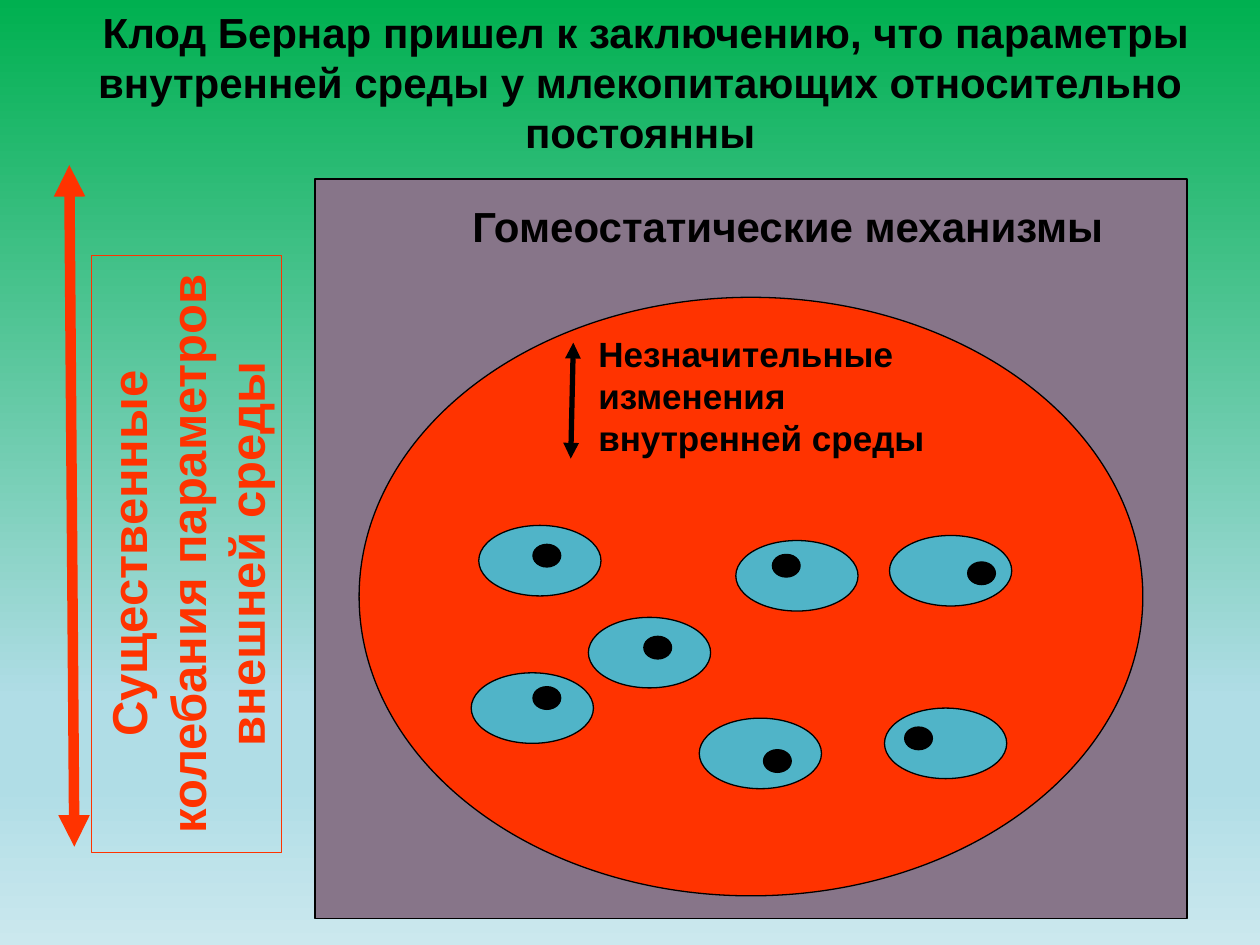
import lxml.etree
import pptx
import pptx.dml.color
import pptx.enum.shapes
import pptx.enum.text
import pptx.oxml.ns
import pptx.util

COLORS = {
    "black": "000000", "red": "FF3300", "mauve": "877589", "cell": "50B4C8",
    "green": "00B050", "sky": "B0DDE6", "pale": "CBE8EE",
}
qn = pptx.oxml.ns.qn
rgb = pptx.dml.color.RGBColor.from_string
Shapes = pptx.enum.shapes.MSO_SHAPE
Align = pptx.enum.text.PP_ALIGN

deck = pptx.Presentation()
deck.slide_width = pptx.util.Inches(10)
deck.slide_height = pptx.util.Inches(7.5)
column = deck.slide_width / 100
row = deck.slide_height / 75
page = deck.slides.add_slide(deck.slide_layouts[6])

background = page.background.fill
background.gradient()
background.gradient_angle = 270
stops = page.element.find(".//" + qn("a:gsLst"))
for stop in list(stops):
    stops.remove(stop)
for share, color in ((0, "green"), (74, "sky"), (83, "sky"), (100, "pale")):
    stop = lxml.etree.SubElement(stops, qn("a:gs"), pos=str(share * 1000))
    lxml.etree.SubElement(stop, qn("a:srgbClr"), val=COLORS[color])


def add_figure(kind, left, top, width, height, fill, line="black"):
    figure = page.shapes.add_shape(
        kind, round(left * column), round(top * row),
        round(width * column), round(height * row))
    figure.shadow.inherit = False
    if fill:
        figure.fill.solid()
        figure.fill.fore_color.rgb = rgb(COLORS[fill])
    else:
        figure.fill.background()
    figure.line.color.rgb = rgb(COLORS[line])
    figure.line.width = pptx.util.Pt(0.75)
    return figure


def write_text(box, text, size, color="black", align=Align.LEFT, wrap=True):
    box.text_frame.word_wrap = wrap
    para = box.text_frame.paragraphs[0]
    para.text = text
    para.alignment = align
    para.font.name = "Arial"
    para.font.size = pptx.util.Pt(size)
    para.font.bold = True
    para.font.color.rgb = rgb(COLORS[color])


add_figure(Shapes.RECTANGLE, 25, 14.2, 69.2, 58.7, "mauve")
add_figure(Shapes.OVAL, 28.5, 23.6, 62.2, 47.5, "red")

cells = (
    (38, 41.7, 42.3, 43.2), (37.4, 53.4, 42.3, 54.5), (55.5, 57, 60.6, 59.5),
    (58.4, 42.9, 61.3, 44), (70.2, 56.2, 71.8, 57.7),
    (70.6, 42.5, 76.8, 44.6), (46.7, 49, 51.1, 50.5),
)
for cell_left, cell_top, nucleus_left, nucleus_top in cells:
    add_figure(Shapes.OVAL, cell_left, cell_top, 9.7, 5.6, "cell")
    add_figure(Shapes.OVAL, nucleus_left, nucleus_top, 2.2, 1.8, "black")

arrows = ((45.5, 27.2, 45.3, 36.4, "black", 3), (5.5, 13.1, 5.9, 67.2, "red", 6))
for start_x, start_y, end_x, end_y, color, weight in arrows:
    arrow = page.shapes.add_connector(
        pptx.enum.shapes.MSO_CONNECTOR.STRAIGHT,
        round(start_x * column), round(start_y * row),
        round(end_x * column), round(end_y * row))
    arrow.line.color.rgb = rgb(COLORS[color])
    arrow.line.width = pptx.util.Pt(weight)
    properties = arrow.element.spPr
    for end in ("a:headEnd", "a:tailEnd"):
        lxml.etree.SubElement(properties.find(qn("a:ln")), qn(end), type="triangle")
    lxml.etree.SubElement(properties, qn("a:effectLst"))

outer_label = add_figure(Shapes.RECTANGLE, -8.9, 36.4, 47.4, 15.1, None, "red")
outer_label.rotation = 270
write_text(outer_label, "Существенные колебания параметров внешней среды",
           28, "red", Align.CENTER)

labels = (
    (36.5, 15.4, 52.5, 5, "Гомеостатические механизмы", 24, Align.LEFT, False),
    (46.5, 25.9, 32.3, 11, "Незначительные изменения внутренней среды",
     20, Align.LEFT, True),
    (4.2, 0, 93.2, 13, " Клод Бернар пришел к заключению, что параметры внутренней "
     "среды у млекопитающих относительно постоянны", 24, Align.CENTER, True),
)
for left, top, width, height, text, size, align, wrap in labels:
    box = page.shapes.add_textbox(
        round(left * column), round(top * row),
        round(width * column), round(height * row))
    write_text(box, text, size, align=align, wrap=wrap)

deck.save("out.pptx")
